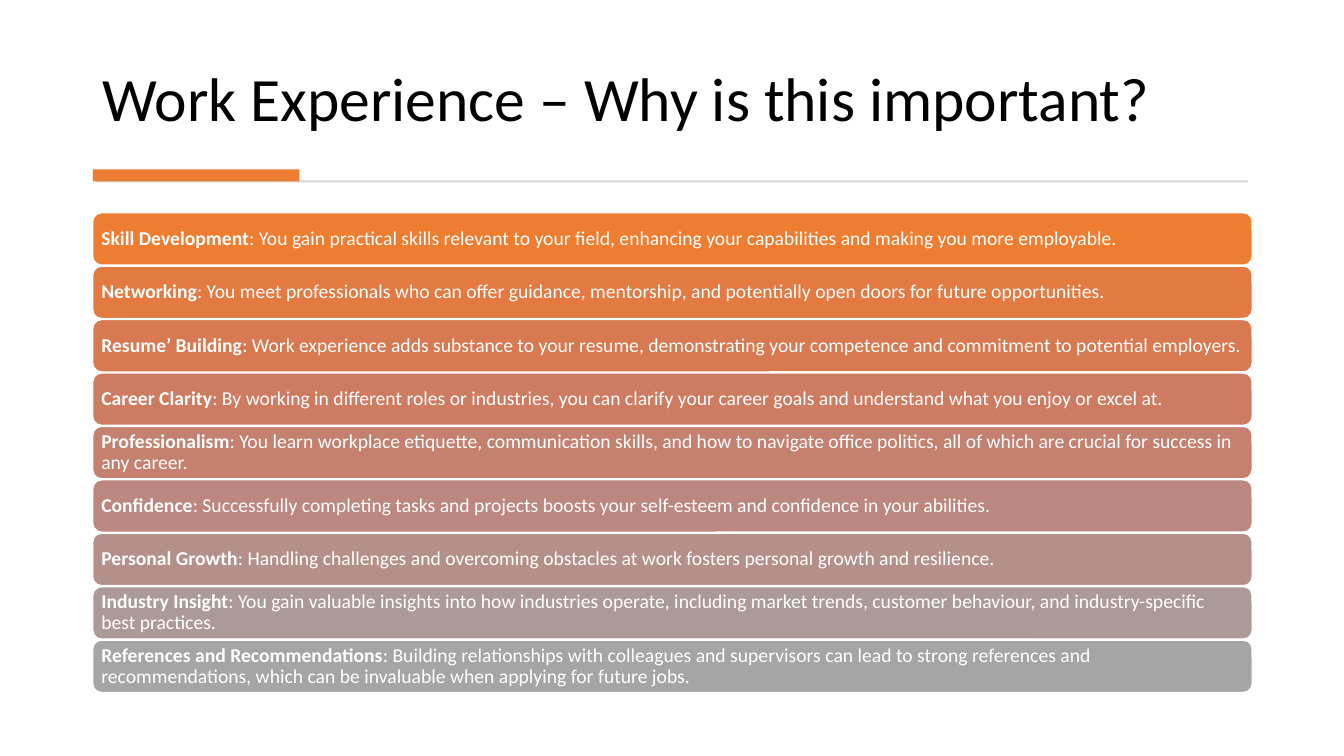
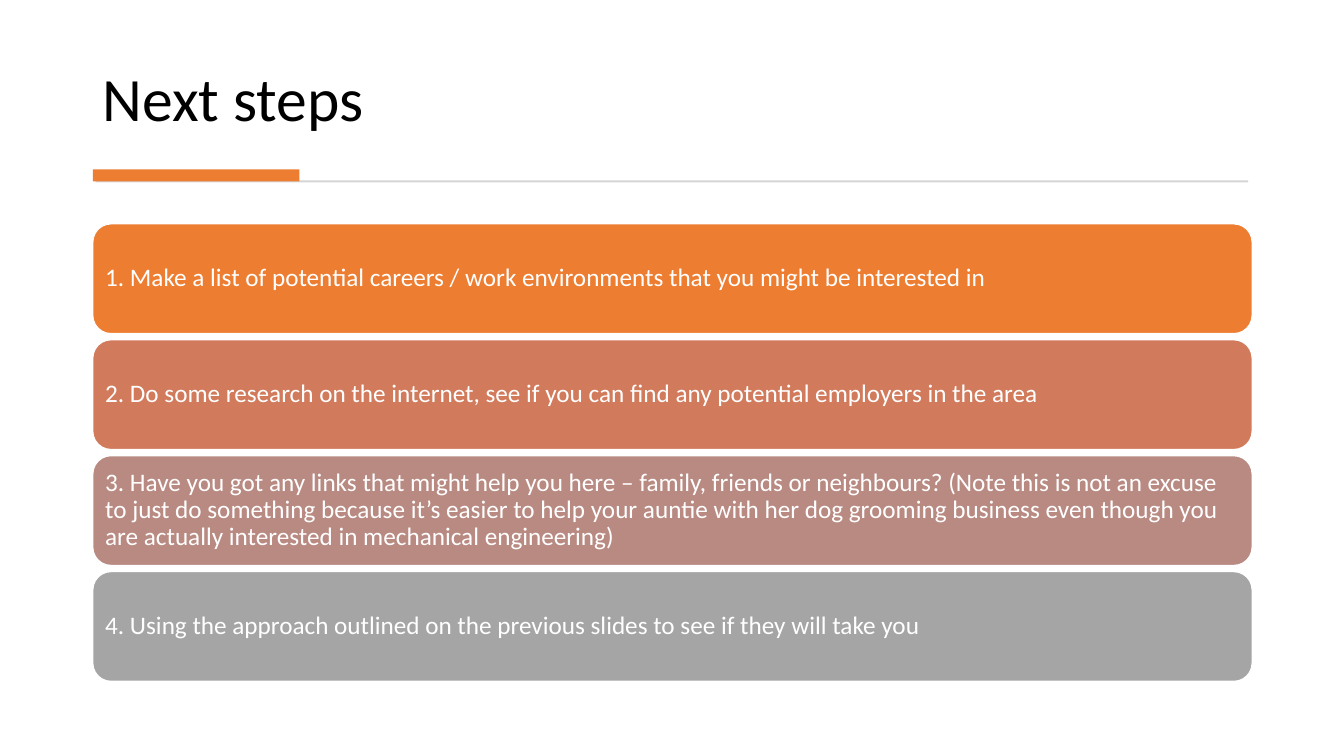
from colorsys import hls_to_rgb, rgb_to_hls
from dataclasses import dataclass

from pptx import Presentation
from pptx.dml.color import RGBColor
from pptx.enum.shapes import MSO_SHAPE as Shape
from pptx.enum.text import MSO_ANCHOR as Anchor, PP_ALIGN as Align
from pptx.util import Emu, Pt

EMU_PER_PX = 9144  # 100 px to the inch


@dataclass(frozen=True)
class Theme:
    font: str = "Calibri"
    ink: str = "000000"
    paper: str = "FFFFFF"
    rule: str = "D5D5D5"
    accent: str = "ED7D31"
    grey: str = "A5A5A5"
    title_size: int = 44
    reason_size: int = 14
    step_size: int = 18
    line_spacing: float = 0.9
    bar_outline: int = 1


def px(n):
    return Emu(n * EMU_PER_PX)


def hls(color):
    return rgb_to_hls(*(c / 255 for c in RGBColor.from_string(color)))


def fade(start, end, count):
    """Return count colours evenly spaced in HLS from start to end."""
    first, last = hls(start), hls(end)
    colors = []
    for i in range(count):
        t = i / (count - 1)
        mix = (a + (b - a) * t for a, b in zip(first, last))
        colors.append(RGBColor(*(round(c * 255) for c in hls_to_rgb(*mix))))
    return colors


class Deck:
    LEFT, WIDTH = 92, 1150

    def __init__(self, theme):
        self.theme = theme
        self.prs = Presentation()
        self.prs.slide_width, self.prs.slide_height = px(1333), px(750)
        self.slide = None

    def new_slide(self, title):
        self.slide = self.prs.slides.add_slide(self.prs.slide_layouts[6])
        self.title(title)
        self.block(Shape.RECTANGLE, 95, 179, 1143, 2, self.theme.rule)
        self.block(Shape.RECTANGLE, self.LEFT, 168, 205, 12, self.theme.accent)

    def title(self, text):
        t = self.theme
        sp = self.slide.shapes.add_textbox(px(self.LEFT), px(28), px(1149), px(111))
        self.add_text(sp.text_frame, [(text, False)], t.title_size, t.ink, Anchor.BOTTOM)

    def block(self, kind, x, y, w, h, color):
        sp = self.slide.shapes.add_shape(kind, px(x), px(y), px(w), px(h))
        sp.shadow.inherit = False
        sp.fill.solid()
        sp.fill.fore_color.rgb = RGBColor.from_string(str(color))
        sp.line.fill.background()
        return sp

    def add_text(self, tf, runs, size, color, anchor):
        """Fill the frame with one paragraph of (text, bold) runs."""
        tf.word_wrap = True
        tf.vertical_anchor = anchor
        p = tf.paragraphs[0]
        p.alignment = Align.LEFT
        p.line_spacing = self.theme.line_spacing
        for text, bold in runs:
            r = p.add_run()
            r.text = text
            r.font.name = self.theme.font
            r.font.size = Pt(size)
            r.font.bold = bold
            r.font.color.rgb = RGBColor.from_string(color)

    def bar(self, y, h, color, runs, size, inset):
        t = self.theme
        sp = self.block(Shape.ROUNDED_RECTANGLE, self.LEFT, y, self.WIDTH, h, color)
        sp.line.color.rgb = RGBColor.from_string(t.paper)
        sp.line.width = Pt(t.bar_outline)
        tf = sp.text_frame
        tf.margin_left = tf.margin_right = px(inset)
        tf.margin_top = tf.margin_bottom = 0
        self.add_text(tf, runs, size, t.paper, Anchor.MIDDLE)

    def bars(self, rows, top, height, gap, size, inset):
        colors = fade(self.theme.accent, self.theme.grey, len(rows))
        for i, (runs, color) in enumerate(zip(rows, colors)):
            self.bar(top + i * (height + gap), height, color, runs, size, inset)


REASONS = [
    ("Skill Development", "You gain practical skills relevant to your field, "
     "enhancing your capabilities and making you more employable."),
    ("Networking", "You meet professionals who can offer guidance, mentorship, "
     "and potentially open doors for future opportunities."),
    ("Resume’ Building", "Work experience adds substance to your resume, "
     "demonstrating your competence and commitment to potential employers."),
    ("Career Clarity", "By working in different roles or industries, you can "
     "clarify your career goals and understand what you enjoy or excel at."),
    ("Professionalism", "You learn workplace etiquette, communication skills, "
     "and how to navigate office politics, all of which are crucial for "
     "success in any career."),
    ("Confidence", "Successfully completing tasks and projects boosts your "
     "self-esteem and confidence in your abilities."),
    ("Personal Growth", "Handling challenges and overcoming obstacles at work "
     "fosters personal growth and resilience."),
    ("Industry Insight", "You gain valuable insights into how industries "
     "operate, including market trends, customer behaviour, and "
     "industry-specific best practices."),
    ("References and Recommendations", "Building relationships with colleagues "
     "and supervisors can lead to strong references and recommendations, "
     "which can be invaluable when applying for future jobs."),
]

STEPS = [
    "Make a list of potential careers / work environments that you might be "
    "interested in",
    "Do some research on the internet, see if you can find any potential "
    "employers in the area",
    "Have you got any links that might help you here – family, friends or "
    "neighbours? (Note this is not an excuse to just do something because it’s "
    "easier to help your auntie with her dog grooming business even though you "
    "are actually interested in mechanical engineering)",
    "Using the approach outlined on the previous slides to see if they will "
    "take you",
]


def main():
    theme = Theme()
    deck = Deck(theme)

    deck.new_slide("Work Experience – Why is this important?")
    reasons = [[(name, True), (f": {text}", False)] for name, text in REASONS]
    deck.bars(reasons, top=211, height=52, gap=1, size=theme.reason_size, inset=6)

    deck.new_slide("Next steps")
    steps = [[(f"{n}. {text}", False)] for n, text in enumerate(STEPS, 1)]
    deck.bars(steps, top=222, height=109, gap=6, size=theme.step_size, inset=7)

    deck.prs.save("out.pptx")


if __name__ == "__main__":
    main()
